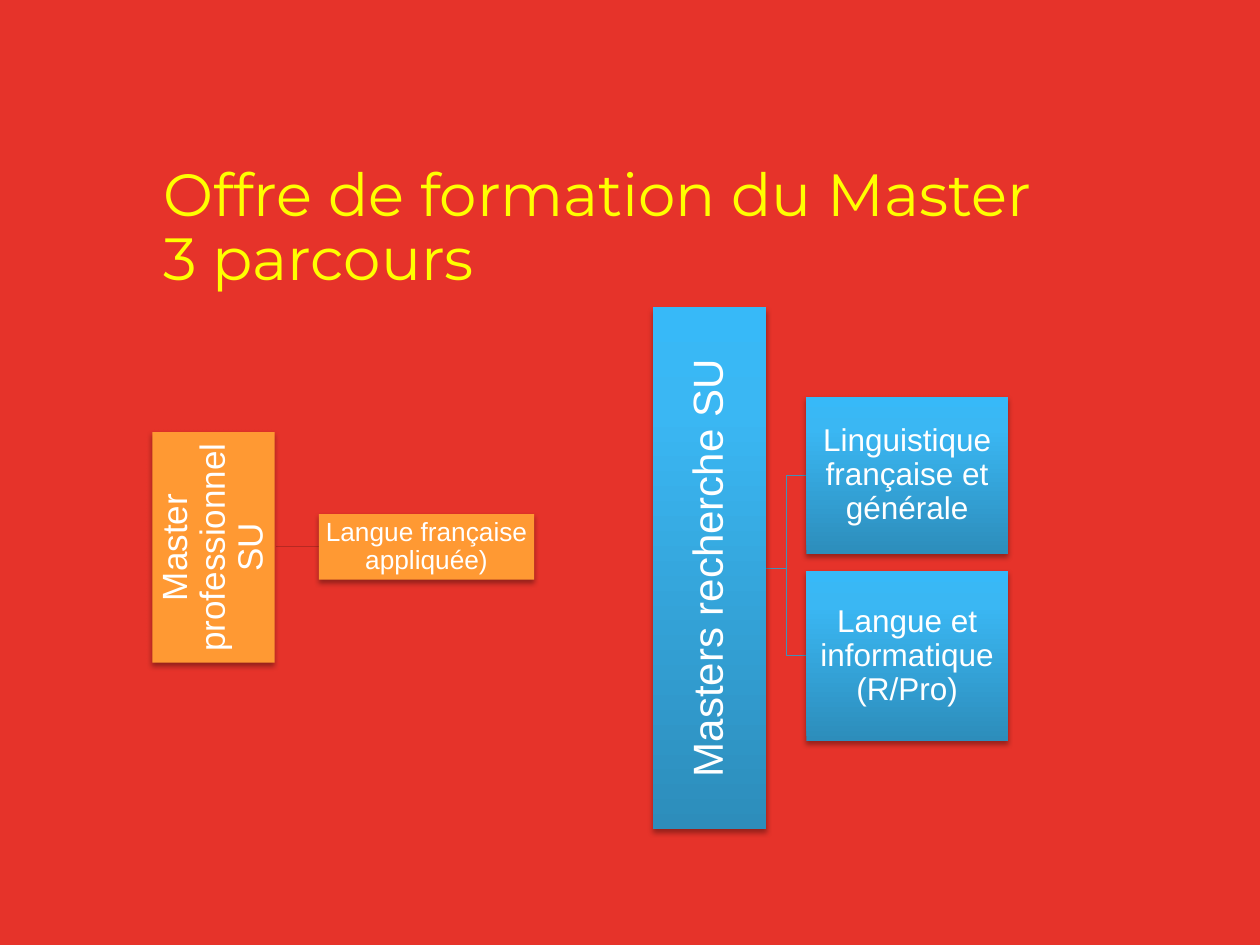
from pptx import Presentation
from pptx.dml.color import RGBColor
from pptx.enum.shapes import MSO_CONNECTOR, MSO_SHAPE
from pptx.enum.text import MSO_ANCHOR, PP_ALIGN
from pptx.oxml import parse_xml
from pptx.oxml.ns import nsdecls, qn
from pptx.util import Inches, Pt

ORANGE = "FF9933"
BLUE_STOPS = [(0, "2D8DBB"), (80, "3AB7F3"), (100, "37B9F8")]


def color(value):
    return RGBColor.from_string(value)


def style_text(frame, text, font, size, hex_color, anchor, margins):
    frame.word_wrap = True
    frame.vertical_anchor = anchor
    frame.margin_left = frame.margin_right = Inches(margins[0])
    frame.margin_top = frame.margin_bottom = Inches(margins[1])
    para = frame.paragraphs[0]
    para.text = text
    para.line_spacing = 0.9
    for span in para.runs:
        span.font.name = font
        span.font.size = Pt(size)
        span.font.color.rgb = color(hex_color)
    return para


def add_title(page, text):
    box = page.shapes.add_textbox(Inches(1.26), Inches(1.08), Inches(8.24), Inches(1.25))
    style_text(box.text_frame, text, "Montserrat", 34, "FFFF00", MSO_ANCHOR.BOTTOM, (0.04, 0))


def add_shadow(shape):
    shape.shadow.inherit = False
    effects = shape._element.spPr.find(qn("a:effectLst"))
    effects.append(parse_xml(
        f'<a:outerShdw {nsdecls("a")} blurRad="{Pt(3.1)}" dist="{Pt(1.8)}" dir="5400000" '
        'rotWithShape="0"><a:srgbClr val="000000"><a:alpha val="35000"/></a:srgbClr>'
        '</a:outerShdw>'))


def fill_gradient(shape, stops):
    """Fill upwards from the first stop, whatever the rotation of the shape."""
    marks = "".join(f'<a:gs pos="{position * 1000}"><a:srgbClr val="{value}"/></a:gs>'
                    for position, value in stops)
    shape.fill.background()
    properties = shape._element.spPr
    properties.replace(properties.find(qn("a:noFill")), parse_xml(
        f'<a:gradFill {nsdecls("a")} rotWithShape="0"><a:gsLst>{marks}</a:gsLst>'
        '<a:lin ang="16200000" scaled="0"/></a:gradFill>'))


def add_node(page, text, place, size, fill, rotation=0, margin=0.01):
    box = page.shapes.add_shape(MSO_SHAPE.RECTANGLE, *map(Inches, place))
    box.rotation = rotation
    box.line.fill.background()
    if isinstance(fill, str):
        box.fill.solid()
        box.fill.fore_color.rgb = color(fill)
    else:
        fill_gradient(box, fill)
    add_shadow(box)
    para = style_text(box.text_frame, text, "Arial", size, "FFFFFF",
                      MSO_ANCHOR.MIDDLE, (margin, margin))
    para.alignment = PP_ALIGN.CENTER


def add_link(page, kind, start, end, hex_color):
    link = page.shapes.add_connector(kind, *map(Inches, (*start, *end)))
    link.line.color.rgb = color(hex_color)
    link.line.width = Pt(0.75)
    link._element.spPr.append(parse_xml(f'<a:effectLst {nsdecls("a")}/>'))


def add_professional_branch(page):
    add_link(page, MSO_CONNECTOR.STRAIGHT, (2.19, 4.34), (2.53, 4.34), "B82922")
    add_node(page, "Master professionnel SU", (0.78, 3.86, 1.83, 0.97), 20, ORANGE, 270)
    add_node(page, "Langue française appliquée)", (2.53, 4.08, 1.71, 0.52), 15, ORANGE)


def add_research_branch(page):
    courses = [("Linguistique française et générale", 3.15, 1.25),
               ("Langue et informatique (R/Pro)", 4.53, 1.35)]
    for _, top, height in courses:
        add_link(page, MSO_CONNECTOR.ELBOW, (6.08, 4.51), (6.4, top + height / 2), "4291B7")
    add_node(page, "Masters recherche SU", (3.56, 4.06, 4.14, 0.9), 24, BLUE_STOPS, 270, 0.02)
    for text, top, height in courses:
        add_node(page, text, (6.4, top, 1.6, height), 18, BLUE_STOPS)


def main():
    deck = Presentation()
    deck.slide_width, deck.slide_height = Inches(10), Inches(7.5)
    page = deck.slides.add_slide(deck.slide_layouts[6])
    page.background.fill.solid()
    page.background.fill.fore_color.rgb = color("E6332A")
    add_title(page, "Offre de formation du Master\v3 parcours")
    add_professional_branch(page)
    add_research_branch(page)
    deck.save("out.pptx")


if __name__ == "__main__":
    main()
